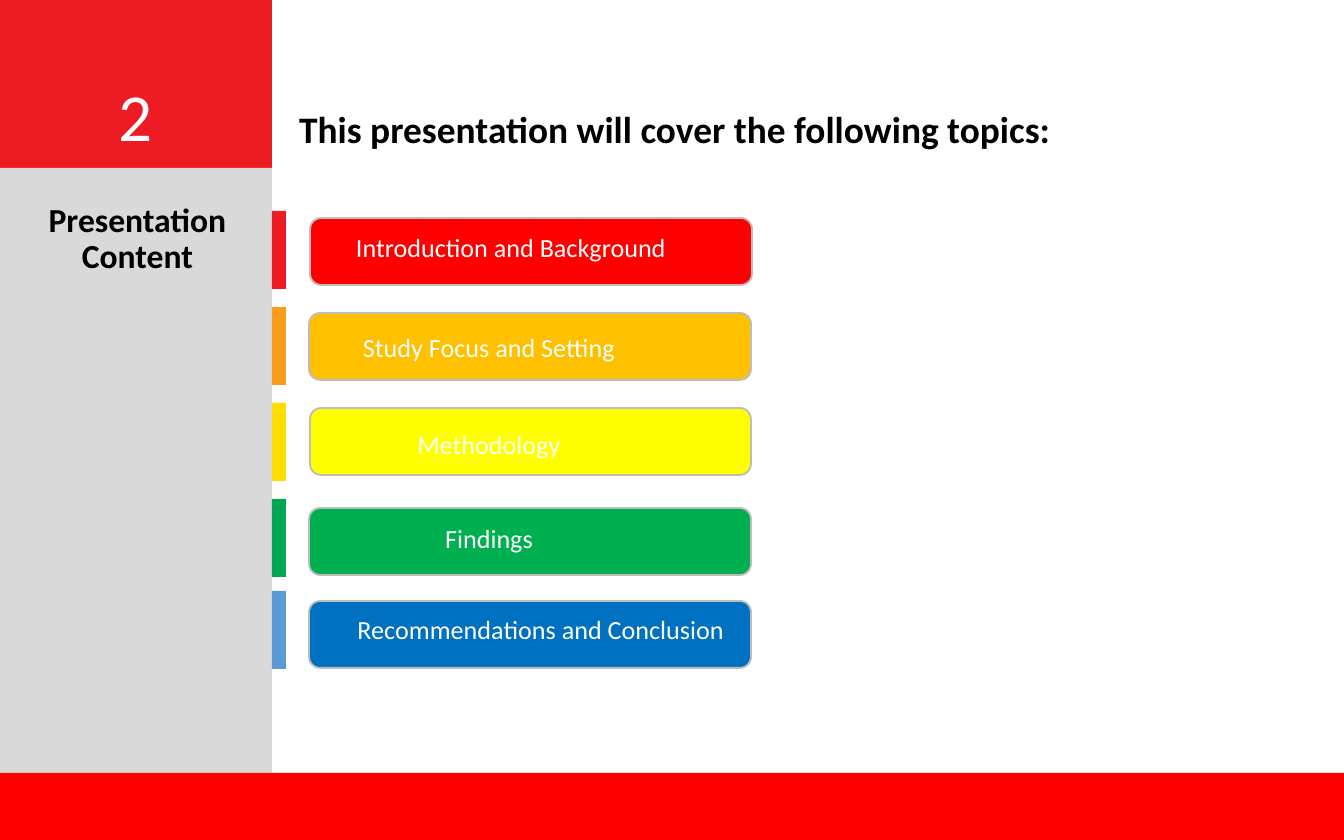
from dataclasses import dataclass

from pptx import Presentation
from pptx.dml.color import RGBColor
from pptx.enum.shapes import MSO_SHAPE
from pptx.enum.text import MSO_ANCHOR, PP_ALIGN
from pptx.shapes.autoshape import Shape
from pptx.slide import Slide
from pptx.util import Pt

EMU_PER_PX = 914400 / 134.4
PAGE_WIDTH, PAGE_HEIGHT = 1344, 840
SIDEBAR_WIDTH, HEADER_HEIGHT, FOOTER_TOP = 272, 168, 773
TAB_WIDTH, TAB_HEIGHT = 14, 78
BUTTON_HEIGHT, LABEL_HEIGHT = 67, 46
PANEL_INSET = 13
FONT = "Calibri"

RECTANGLE = MSO_SHAPE.RECTANGLE
BUTTON = MSO_SHAPE.FLOWCHART_ALTERNATE_PROCESS
LEFT, CENTER = PP_ALIGN.LEFT, PP_ALIGN.CENTER
TOP, BOTTOM = MSO_ANCHOR.TOP, MSO_ANCHOR.BOTTOM

COLORS = {
    "header": "ED1B23",
    "sidebar": "D9D9D9",
    "footer": "FF0000",
    "outline": "BCBDBC",
    "heading": "000000",
    "number": "FFFFFF",
    "label": "FEFFFE",
    "tab red": "ED1B23",
    "tab orange": "F99D1A",
    "tab yellow": "FFDD00",
    "tab green": "00A651",
    "tab blue": "5B9BD5",
    "red": "FF0000",
    "orange": "FFC000",
    "yellow": "FFFF00",
    "green": "00B050",
    "blue": "0070C0",
}


@dataclass(frozen=True)
class Area:
    left: int
    top: int
    width: int
    height: int

    def emu(self) -> list[int]:
        return [px(v) for v in (self.left, self.top, self.width, self.height)]


@dataclass(frozen=True)
class TextStyle:
    size: int
    color: str
    bold: bool = False
    align: PP_ALIGN = CENTER
    spacing: float = 1.0


@dataclass(frozen=True)
class Topic:
    text: str
    color: str
    tab_top: int
    button: Area
    label: Area


NUMBER = TextStyle(36, "number")
HEADING = TextStyle(20, "heading", True, LEFT, 0.9)
TITLE = TextStyle(18, "heading", True, CENTER, 0.9)
LABEL = TextStyle(14, "label")

TOPICS = [
    Topic("Introduction and Background", "red", 211,
          Area(310, 218, 442, BUTTON_HEIGHT), Area(327, 225, 368, LABEL_HEIGHT)),
    Topic("Study Focus and Setting", "orange", 307,
          Area(309, 313, 442, BUTTON_HEIGHT), Area(325, 325, 328, LABEL_HEIGHT)),
    Topic("Methodology", "yellow", 403,
          Area(310, 408, 441, BUTTON_HEIGHT), Area(325, 422, 328, LABEL_HEIGHT)),
    Topic("Findings", "green", 499,
          Area(309, 508, 442, BUTTON_HEIGHT), Area(325, 516, 328, LABEL_HEIGHT)),
    Topic("Recommendations and Conclusion", "blue", 591,
          Area(309, 601, 442, BUTTON_HEIGHT), Area(332, 607, 418, LABEL_HEIGHT)),
]


def px(length: int) -> int:
    return round(length * EMU_PER_PX)


def rgb(name: str) -> RGBColor:
    return RGBColor.from_string(COLORS[name])


def add_block(page: Slide, area: Area, color: str,
              kind: MSO_SHAPE = RECTANGLE, outline: str = "") -> Shape:
    block = page.shapes.add_shape(kind, *area.emu())
    block.shadow.inherit = False
    block.fill.solid()
    block.fill.fore_color.rgb = rgb(color)
    if outline:
        block.line.color.rgb = rgb(outline)
        block.line.width = Pt(1)
    else:
        block.line.fill.background()
    return block


def write(box: Shape, lines: list[str], style: TextStyle,
          anchor: MSO_ANCHOR = TOP, inset: int = 0) -> None:
    """Fill a box with one paragraph; a nonzero inset applies to all sides."""
    frame = box.text_frame
    frame.word_wrap = True
    frame.vertical_anchor = anchor
    if inset:
        frame.margin_left = frame.margin_right = px(inset)
        frame.margin_top = frame.margin_bottom = px(inset)
    para = frame.paragraphs[0]
    para.alignment = style.align
    para.line_spacing = style.spacing
    for index, line in enumerate(lines):
        if index:
            para.add_line_break()
        span = para.add_run()
        span.text = line
        span.font.name = FONT
        span.font.size = Pt(style.size)
        span.font.bold = style.bold
        span.font.color.rgb = rgb(style.color)


def add_text(page: Slide, area: Area, lines: list[str],
             style: TextStyle, inset: int = 0) -> None:
    write(page.shapes.add_textbox(*area.emu()), lines, style, inset=inset)


def add_frame(page: Slide) -> None:
    """Draw the numbered header, the sidebar and the footer band."""
    header = add_block(page, Area(0, 0, SIDEBAR_WIDTH, HEADER_HEIGHT), "header")
    write(header, ["2"], NUMBER, BOTTOM, PANEL_INSET)
    add_block(page, Area(0, HEADER_HEIGHT, SIDEBAR_WIDTH,
                         FOOTER_TOP - HEADER_HEIGHT), "sidebar")
    add_block(page, Area(0, FOOTER_TOP, PAGE_WIDTH,
                         PAGE_HEIGHT - FOOTER_TOP), "footer")


def add_topic(page: Slide, topic: Topic) -> None:
    tab = Area(SIDEBAR_WIDTH, topic.tab_top, TAB_WIDTH, TAB_HEIGHT)
    add_block(page, tab, f"tab {topic.color}")
    add_block(page, topic.button, topic.color, BUTTON, "outline")
    add_text(page, topic.label, [topic.text], LABEL)


def main() -> None:
    deck = Presentation()
    deck.slide_width, deck.slide_height = px(PAGE_WIDTH), px(PAGE_HEIGHT)
    page = deck.slides.add_slide(deck.slide_layouts[6])
    add_frame(page)
    add_text(page, Area(286, 105, 894, 636),
             ["This presentation will cover the following topics:"], HEADING)
    add_text(page, Area(16, 190, 243, 465),
             ["Presentation", "Content"], TITLE, PANEL_INSET)
    for topic in TOPICS:
        add_topic(page, topic)
    deck.save("out.pptx")


if __name__ == "__main__":
    main()
